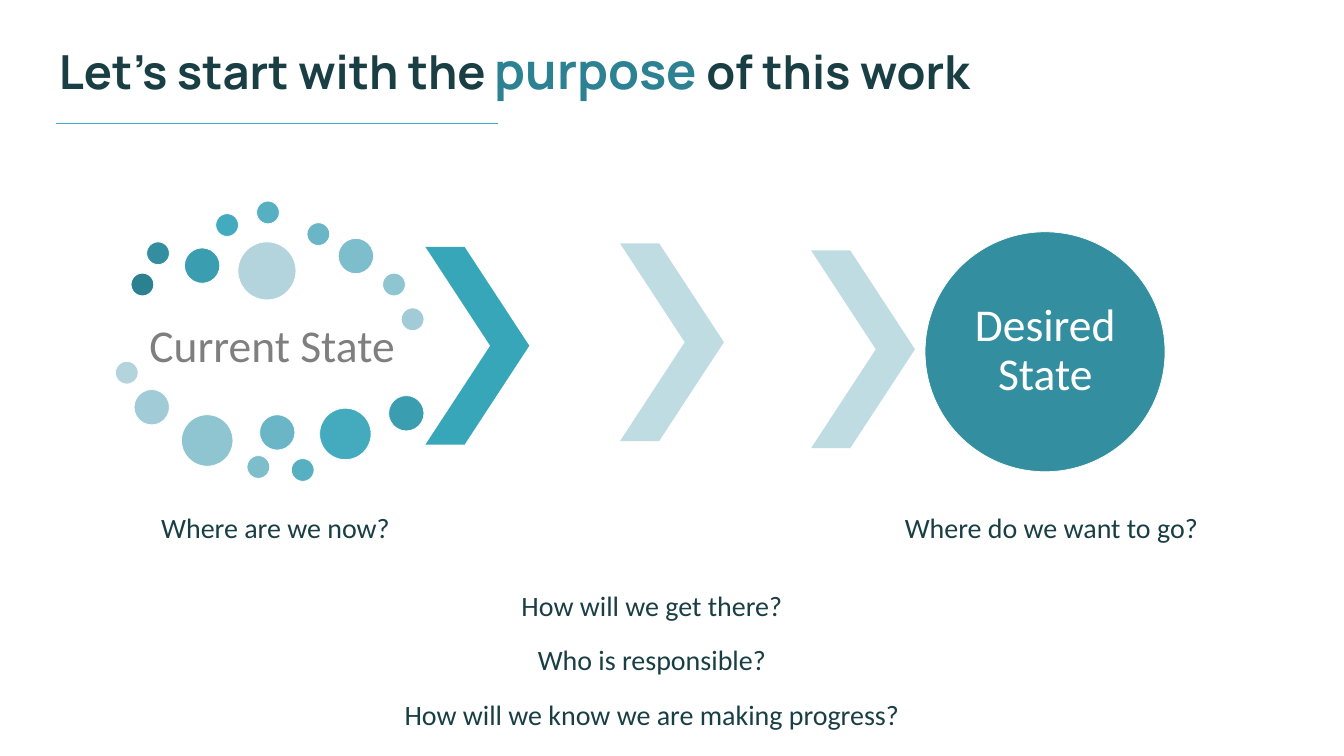
from dataclasses import dataclass

from pptx import Presentation
from pptx.dml.color import RGBColor
from pptx.enum.shapes import MSO_CONNECTOR, MSO_SHAPE
from pptx.enum.text import MSO_ANCHOR as Anchor, MSO_AUTO_SIZE as AutoSize, PP_ALIGN as Align
from pptx.oxml.ns import qn
from pptx.util import Inches, Pt
from lxml import etree


@dataclass(frozen=True)
class Theme:
    ink: str = "193F45"
    accent: str = "2C8292"
    rule: str = "3DAFCE"
    muted: str = "7F7F7F"
    white: str = "FFFFFF"
    desired: str = "338FA0"
    active_arrow: str = "38A6B9"
    pale_arrow: str = "C0DCE3"
    ramp: tuple = ("2C8190", "338FA0", "3A9DB0", "44AABE", "57B0C2",
                   "6AB6C7", "7DBDCC", "8FC5D1", "A1CCD7", "B3D4DD")
    heading_font: str = "Manrope"
    body_font: str = "Calibri"
    title_size: int = 67
    emphasis_size: int = 72
    state_size: int = 65
    question_size: int = 40


THEME = Theme()
SMALL, MEDIUM, LARGE, HUGE = 0.45, 0.7, 1.02, 1.15

# left, top, diameter; colours follow the ramp, dark to light
UPPER_DOTS = [
    (2.6, 5.42, SMALL), (2.91, 4.8, SMALL), (3.66, 4.92, MEDIUM),
    (4.28, 4.24, SMALL), (5.09, 3.99, SMALL), (6.09, 4.42, SMALL),
    (6.71, 4.73, MEDIUM), (7.59, 5.42, SMALL), (7.96, 6.11, SMALL),
    (4.72, 4.8, HUGE),
]
# colours follow the ramp, light to dark
LOWER_DOTS = [
    (2.29, 7.17, SMALL), (2.66, 7.73, MEDIUM), (3.6, 8.23, LARGE),
    (4.9, 9.04, SMALL), (5.15, 8.23, MEDIUM), (5.78, 9.1, SMALL),
    (6.34, 8.1, LARGE), (7.71, 7.85, MEDIUM),
]
ARROWS = [
    (8.44, 4.9, THEME.active_arrow),
    (12.3, 4.83, THEME.pale_arrow),
    (16.09, 4.97, THEME.pale_arrow),
]


def add_run(paragraph, text, *, size, color, font=THEME.body_font, bold=False):
    run = paragraph.add_run()
    run.text = text
    run.font.name = font
    run.font.size = Pt(size)
    run.font.bold = bold
    run.font.color.rgb = RGBColor.from_string(color)


class SlideBuilder:
    def __init__(self, slide, theme):
        self.slide = slide
        self.theme = theme

    def text(self, left, top, width, height, paragraphs, *, align=Align.LEFT,
             anchor=Anchor.TOP, insets=(0.1, 0.05), wrap=True, grow=False,
             line_spacing=None, gap=0, **style):
        """Each paragraph is a list of (text, format overrides) pairs."""
        box = self.slide.shapes.add_textbox(*map(Inches, (left, top, width, height)))
        frame = box.text_frame
        frame.word_wrap = wrap
        frame.auto_size = AutoSize.SHAPE_TO_FIT_TEXT if grow else AutoSize.NONE
        frame.vertical_anchor = anchor
        frame.margin_left = frame.margin_right = Inches(insets[0])
        frame.margin_top = frame.margin_bottom = Inches(insets[1])
        for index, runs in enumerate(paragraphs):
            paragraph = frame.add_paragraph() if index else frame.paragraphs[0]
            paragraph.alignment = align
            paragraph.line_spacing = line_spacing
            if index and gap:
                paragraph.space_before = Pt(gap)
            for content, overrides in runs:
                add_run(paragraph, content, **{**style, **overrides})

    def state(self, left, top, width, height, label, color, inset=0):
        self.text(left, top, width, height, [[(label, {})]], align=Align.CENTER,
                  anchor=Anchor.MIDDLE, insets=(inset, inset), line_spacing=0.9,
                  size=self.theme.state_size, color=color)

    def questions(self, left, top, width, height, lines, **layout):
        self.text(left, top, width, height, [[(line, {})] for line in lines],
                  grow=True, gap=30, size=self.theme.question_size,
                  color=self.theme.ink, **layout)

    def shape(self, preset, left, top, width, height, fill):
        shape = self.slide.shapes.add_shape(preset, *map(Inches, (left, top, width, height)))
        shape.shadow.inherit = False
        shape.fill.solid()
        shape.fill.fore_color.rgb = RGBColor.from_string(fill)
        return shape

    def circle(self, left, top, diameter, fill):
        circle = self.shape(MSO_SHAPE.OVAL, left, top, diameter, diameter, fill)
        circle.line.color.rgb = RGBColor.from_string(self.theme.white)
        circle.line.width = Pt(1)

    def chevron(self, left, top, fill):
        chevron = self.shape(MSO_SHAPE.CHEVRON, left, top, 2.06, 3.92, fill)
        chevron.adjustments[0] = 0.623
        chevron.line.fill.background()

    def rule(self, left, right, y):
        rule = self.slide.shapes.add_connector(
            MSO_CONNECTOR.STRAIGHT, *map(Inches, (left, y, right, y)))
        rule.line.color.rgb = RGBColor.from_string(self.theme.rule)
        rule.line.width = Pt(1)
        etree.SubElement(rule._element.spPr, qn("a:effectLst"))


def main():
    deck = Presentation()
    deck.slide_width, deck.slide_height = Inches(26.66), Inches(15)
    slide = SlideBuilder(deck.slides.add_slide(deck.slide_layouts[6]), THEME)

    emphasis = {"size": THEME.emphasis_size, "color": THEME.accent}
    slide.text(0.93, 0, 22.99, 2.9,
               [[("Let’s start with the ", {}), ("purpose", emphasis), (" of this work", {})]],
               anchor=Anchor.MIDDLE, insets=(0.24, 0.12), line_spacing=0.9,
               size=THEME.title_size, color=THEME.ink, font=THEME.heading_font, bold=True)
    slide.rule(1.11, 9.88, 2.45)

    slide.state(2.6, 5.98, 5.6, 1.84, "Current State", THEME.muted, inset=0.09)
    for dots, colors in ((UPPER_DOTS, THEME.ramp), (LOWER_DOTS, THEME.ramp[::-1])):
        for dot, color in zip(dots, colors):
            slide.circle(*dot, color)

    for arrow in ARROWS:
        slide.chevron(*arrow)

    slide.circle(18.35, 4.6, 4.76, THEME.desired)
    slide.state(19.05, 5.29, 3.37, 3.37, "Desired State", THEME.white)

    slide.questions(17.85, 10.08, 6.07, 0.77, ["Where do we want to go?"], wrap=False)
    slide.questions(3.1, 10.08, 4.78, 0.77, ["Where are we now?"], wrap=False)
    slide.questions(7.55, 11.62, 10.76, 2.96,
                    ["How will we get there?", "Who is responsible?",
                     "How will we know we are making progress?"],
                    align=Align.CENTER)

    deck.save("out.pptx")


if __name__ == "__main__":
    main()
